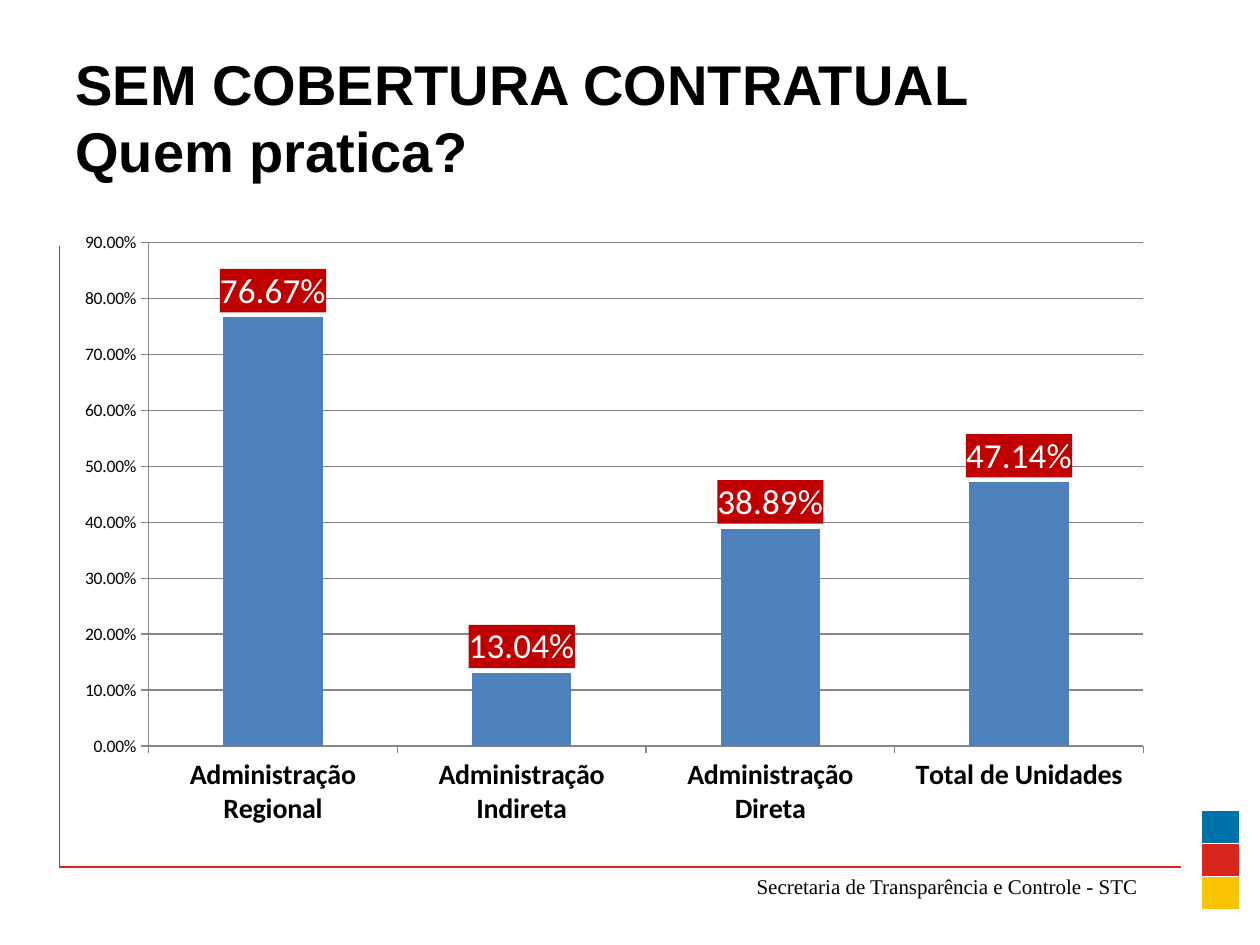
from pptx import Presentation
from pptx.chart.data import CategoryChartData
from pptx.dml.color import RGBColor
from pptx.enum.chart import XL_CHART_TYPE, XL_LABEL_POSITION, XL_TICK_MARK
from pptx.enum.shapes import MSO_CONNECTOR
from pptx.enum.text import MSO_ANCHOR, PP_ALIGN
from pptx.oxml import parse_xml
from pptx.oxml.ns import nsdecls
from pptx.util import Inches, Pt

COLUMN = XL_CHART_TYPE.COLUMN_CLUSTERED
OUTSIDE_END = XL_LABEL_POSITION.OUTSIDE_END
TICK_OUT, TICK_NONE = XL_TICK_MARK.OUTSIDE, XL_TICK_MARK.NONE
STRAIGHT = MSO_CONNECTOR.STRAIGHT
TOP, MIDDLE = MSO_ANCHOR.TOP, MSO_ANCHOR.MIDDLE
LEFT, RIGHT = PP_ALIGN.LEFT, PP_ALIGN.RIGHT

COLORS = {
    "text": "000000", "label": "FFFFFF", "label_fill": "C00000",
    "bar": "4F81BD", "grid": "868686",
    "blue": "0072AA", "red": "DA251D", "yellow": "F8C300",
}
TITLE = {"name": "Arial", "size": Pt(32), "bold": True}
FOOTER = {"name": "Times New Roman", "size": Pt(12)}
CHART = {"name": "Calibri", "size": Pt(10)}
CATEGORY = {"name": "Calibri", "size": Pt(16), "bold": True}
LABEL = {"name": "Calibri", "size": Pt(20)}
PERCENT = "0.00%"
SHARES = {
    "Administração Regional": 0.7667,
    "Administração Indireta": 0.1304,
    "Administração Direta": 0.3889,
    "Total de Unidades": 0.4714,
}


class SlideBuilder:
    """Hold the colours and the current slide, and add each kind of element."""

    def __init__(self, slide, colors):
        self.slide = slide
        self.colors = colors

    def color(self, name):
        return RGBColor.from_string(self.colors[name])

    def style(self, font, values, color="text"):
        for name, value in values.items():
            setattr(font, name, value)
        font.color.rgb = self.color(color)

    def paint(self, fill, color):
        fill.solid()
        fill.fore_color.rgb = self.color(color)

    def text(self, text, area, values, align=LEFT, anchor=TOP):
        box = self.slide.shapes.add_textbox(*map(Inches, area))
        frame = box.text_frame
        frame.word_wrap = True
        frame.vertical_anchor = anchor
        para = frame.paragraphs[0]
        para.text = text
        para.alignment = align
        for span in para.runs:
            self.style(span.font, values)

    def line(self, start, end, color):
        rule = self.slide.shapes.add_connector(STRAIGHT, *map(Inches, start + end))
        rule.line.color.rgb = self.color(color)
        rule.line.width = Pt(0.75)
        rule._element.spPr.append(parse_xml(f"<a:effectLst {nsdecls('a')}/>"))

    def swatches(self, area, colors):
        table = self.slide.shapes.add_table(len(colors), 1, *map(Inches, area)).table
        table.first_row = table.horz_banding = False
        for row, color in enumerate(colors):
            cell = table.cell(row, 0)
            cell.margin_top = cell.margin_bottom = 0
            self.paint(cell.fill, color)
            para = cell.text_frame.paragraphs[0]
            para._p.get_or_add_endParaRPr().set("sz", "800")

    def axis(self, axis, values):
        axis.major_tick_mark = TICK_OUT
        axis.minor_tick_mark = TICK_NONE
        axis.format.line.color.rgb = self.color("grid")
        self.style(axis.tick_labels.font, values)

    def labels(self, plot):
        plot.has_data_labels = True
        labels = plot.data_labels
        labels.show_value = True
        labels.number_format = PERCENT
        labels.number_format_is_linked = False
        labels.position = OUTSIDE_END
        self.style(labels.font, LABEL, "label")
        labels._element.find("{*}numFmt").addnext(parse_xml(
            f"<c:spPr {nsdecls('c', 'a')}><a:solidFill>"
            f"<a:srgbClr val=\"{self.colors['label_fill']}\"/>"
            "</a:solidFill></c:spPr>"))

    def chart(self, area, shares):
        data = CategoryChartData(number_format=PERCENT)
        data.categories = list(shares)
        data.add_series("Series 1", list(shares.values()))
        chart = self.slide.shapes.add_chart(COLUMN, *map(Inches, area), data).chart
        chart.has_legend = chart.has_title = False
        self.style(chart.font, CHART)
        self.axis(chart.category_axis, CATEGORY)
        scale = chart.value_axis
        self.axis(scale, CHART)
        scale.minimum_scale, scale.maximum_scale, scale.major_unit = 0, 0.9, 0.1
        scale.tick_labels.number_format = PERCENT
        scale.tick_labels.number_format_is_linked = False
        scale.major_gridlines.format.line.color.rgb = self.color("grid")
        plot = chart.plots[0]
        plot.gap_width = 150
        plot.vary_by_categories = False
        self.paint(plot.series[0].format.fill, "bar")
        self.labels(plot)


def main():
    deck = Presentation()
    deck.slide_width, deck.slide_height = Inches(10), Inches(7.5)
    page = SlideBuilder(deck.slides.add_slide(deck.slide_layouts[6]), COLORS)
    corner = (0.47, 6.88)
    page.line((0.47, 1.95), corner, "red")
    page.line(corner, (9.37, 6.88), "red")
    page.text("Secretaria de Transparência e Controle - STC",
              (0.86, 6.88, 8.27, 0.3), FOOTER, RIGHT)
    page.swatches((9.53, 6.43, 0.31, 0.79), ["blue", "red", "yellow"])
    page.text("SEM COBERTURA CONTRATUAL\vQuem pratica?",
              (0.5, 0.3, 7.96, 1.25), TITLE, anchor=MIDDLE)
    page.chart((0.5, 1.75, 8.75, 4.91), SHARES)
    deck.save("out.pptx")


if __name__ == "__main__":
    main()
